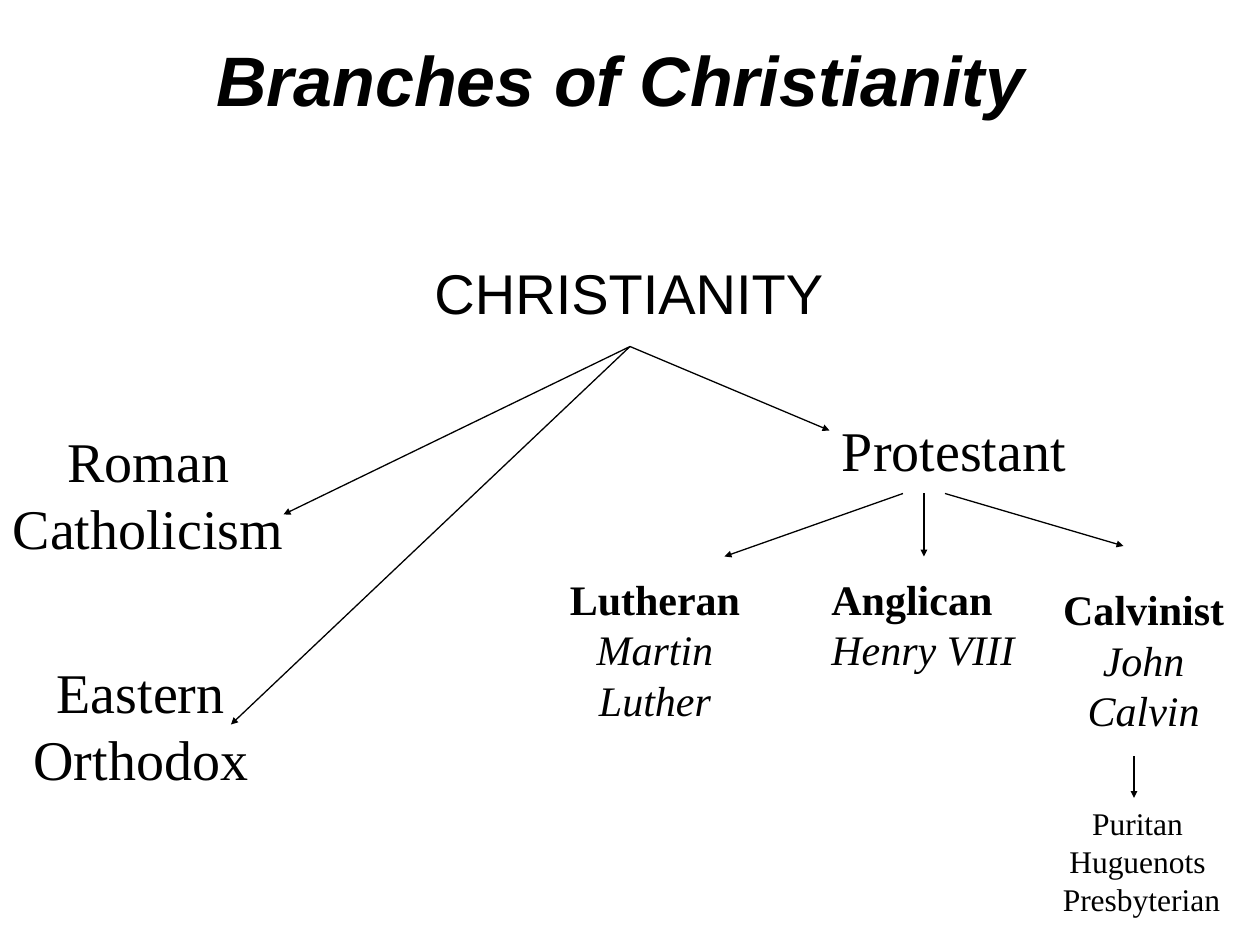
from lxml import etree
from pptx import Presentation
from pptx.dml.color import RGBColor
from pptx.enum import shapes, text
from pptx.oxml.ns import qn
from pptx.util import Pt

BLACK = RGBColor(0, 0, 0)
SANS, SERIF = "Arial", "Times New Roman"
LEFT, CENTER = text.PP_ALIGN.LEFT, text.PP_ALIGN.CENTER
TOP, MIDDLE = text.MSO_ANCHOR.TOP, text.MSO_ANCHOR.MIDDLE
FIXED, GROW = text.MSO_AUTO_SIZE.NONE, text.MSO_AUTO_SIZE.SHAPE_TO_FIT_TEXT


def style_paragraph(paragraph, size, font_name, align=CENTER, bold=False, italic=False):
    paragraph.alignment = align
    font = paragraph.font
    font.size, font.name = Pt(size), font_name
    font.bold, font.italic = bold, italic
    font.color.rgb = BLACK


def add_title(slide, box, wording):
    title = slide.shapes.title
    title.left, title.top, title.width, title.height = map(Pt, box)
    frame = title.text_frame
    frame.text = wording
    frame.auto_size = FIXED
    frame.vertical_anchor = MIDDLE
    style_paragraph(frame.paragraphs[0], 40, SANS, bold=True, italic=True)


def add_label(slide, box, lines, size, font_name=SERIF, align=CENTER,
              anchor=MIDDLE, wrap=False, auto_size=GROW, founder=False):
    """Add one label; with founder, a bold branch name heads italic lines."""
    frame = slide.shapes.add_textbox(*map(Pt, box)).text_frame
    frame.word_wrap = wrap
    frame.auto_size = auto_size
    frame.vertical_anchor = anchor
    frame.text = "\n".join(lines)
    for index, paragraph in enumerate(frame.paragraphs):
        style_paragraph(paragraph, size, font_name, align,
                        bold=founder and index == 0,
                        italic=founder and index > 0)
    return frame


def add_arrow(slide, start, end):
    arrow = slide.shapes.add_connector(
        shapes.MSO_CONNECTOR.STRAIGHT, *map(Pt, (*start, *end)))
    arrow.line.color.rgb = BLACK
    arrow.line.width = Pt(0.75)
    etree.SubElement(arrow.line._get_or_add_ln(), qn("a:tailEnd"),
                     type="triangle", w="sm", len="sm")
    etree.SubElement(arrow._element.spPr, qn("a:effectLst"))


def add_main_branches(slide, left, top):
    """Place the root, its three branches and the arrows between them."""
    root = add_label(slide, (left + 42, top, 635, 324), ["CHRISTIANITY"], 32,
                     SANS, anchor=TOP, wrap=True, auto_size=FIXED)
    root.paragraphs[0].space_before = Pt(4)
    add_label(slide, (left, top + 96, 169.5, 84), ["Roman", "Catholicism"], 32)
    add_label(slide, (left + 12, top + 228, 137, 84), ["Eastern", "Orthodox"], 32)
    add_label(slide, (left + 474, top + 90, 142.5, 45), ["Protestant"], 32, align=LEFT)
    for x, y in ((162, 150), (132, 270), (474, 102)):
        add_arrow(slide, (left + 360, top + 54), (left + x, top + y))


def add_protestant_branches(slide, left, top):
    """Place the Protestant churches, their founders and the Calvinist groups."""
    add_label(slide, (left, top + 42, 112.5, 93.6),
              ["Lutheran", "Martin", "Luther"], 24, founder=True)
    add_label(slide, (left + 150, top + 42, 120, 65),
              ["Anglican", "Henry VIII"], 24, align=LEFT, wrap=True, founder=True)
    add_label(slide, (left + 282, top + 48, 107, 93.6),
              ["Calvinist", "John", "Calvin"], 24, founder=True)
    add_label(slide, (left + 282, top + 174, 104.5, 72),
              ["Puritan ", "Huguenots ", "Presbyterian"], 18, anchor=TOP)
    for start, end in (((198, 0), (96, 36)), ((210, 0), (210, 36)),
                       ((222, 0), (324, 30)), ((330, 150), (330, 174))):
        add_arrow(slide, (left + start[0], top + start[1]),
                  (left + end[0], top + end[1]))


def main():
    presentation = Presentation()
    presentation.slide_width, presentation.slide_height = Pt(720), Pt(540)
    slide = presentation.slides.add_slide(presentation.slide_layouts[5])
    add_title(slide, (54, 0, 612, 90), "Branches of Christianity ")
    add_main_branches(slide, 0, 144)
    add_protestant_branches(slide, 318, 282)
    presentation.save("out.pptx")


if __name__ == "__main__":
    main()
